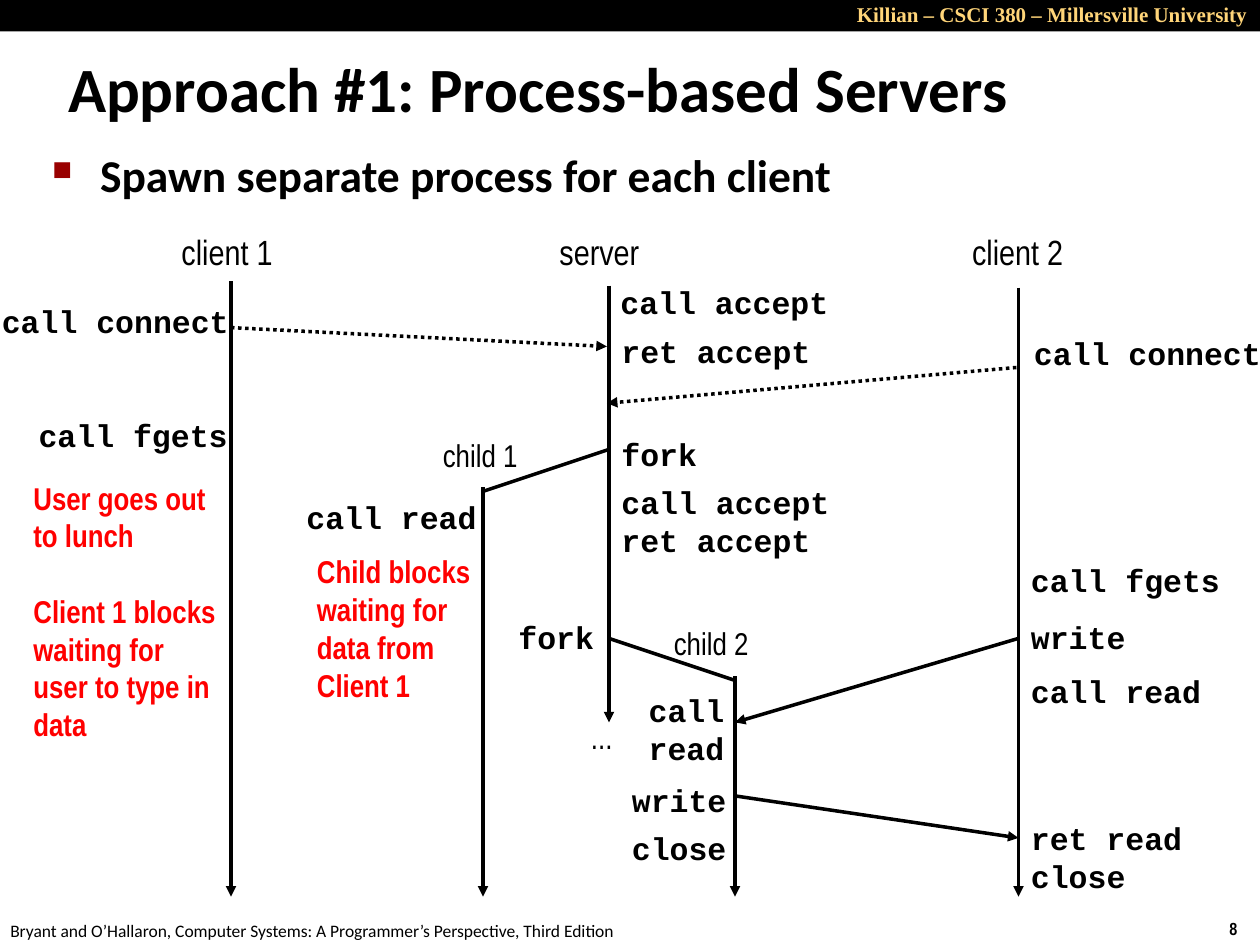
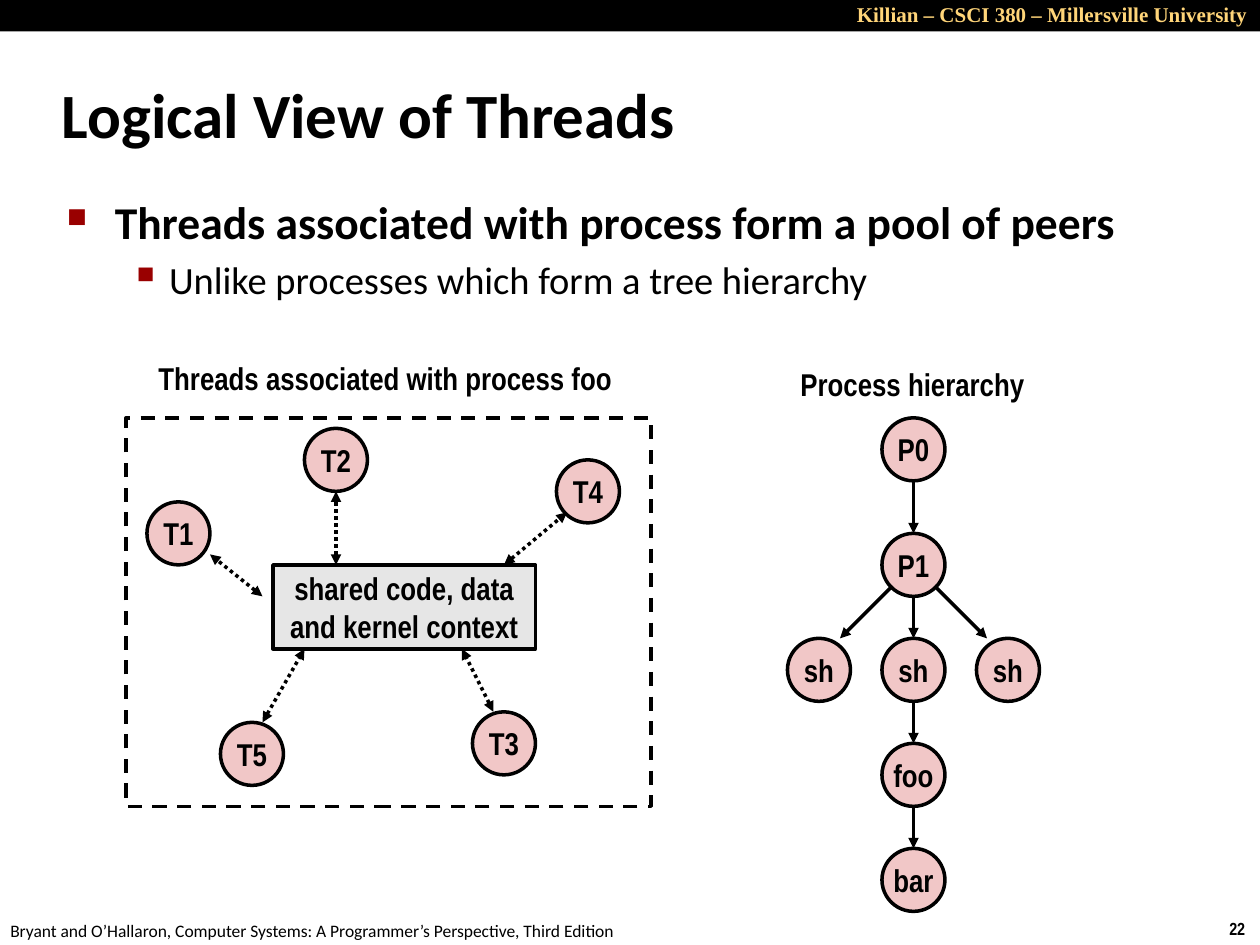
from lxml import etree
from pptx import Presentation
from pptx.dml.color import RGBColor
from pptx.enum.dml import MSO_LINE
from pptx.enum.shapes import MSO_CONNECTOR, MSO_SHAPE
from pptx.enum.text import MSO_ANCHOR, PP_ALIGN
from pptx.oxml.ns import qn
from pptx.util import Inches, Pt

# Grid: 120 columns by 90 rows over the slide
WIDTH, HEIGHT = Inches(10), Inches(7.5)
COLUMNS, ROWS = 120, 90
CELL = WIDTH // COLUMNS

BLACK = RGBColor(0x00, 0x00, 0x00)
GOLD = RGBColor(0xFF, 0xD5, 0x79)
RED = RGBColor(0xFF, 0x00, 0x00)
PINK = RGBColor(0xF1, 0xC7, 0xC7)
GREY = RGBColor(0xE6, 0xE6, 0xE6)
BULLET_RED = "990000"

HEADING, NARROW, CODE, SERIF = "Calibri", "Arial Narrow", "Courier New", "Times New Roman"
LEFT, CENTER, RIGHT = PP_ALIGN.LEFT, PP_ALIGN.CENTER, PP_ALIGN.RIGHT
TOP, MIDDLE = MSO_ANCHOR.TOP, MSO_ANCHOR.MIDDLE
DOTTED, DASHED = MSO_LINE.ROUND_DOT, MSO_LINE.DASH
RECTANGLE, ELLIPSE = MSO_SHAPE.RECTANGLE, MSO_SHAPE.OVAL
STRAIGHT = MSO_CONNECTOR.STRAIGHT

LINE_WIDTH = Pt(2)
TEXT_ROWS = 4.8      # height of one 18 pt line with its margins
NODE = 6             # diameter of a circle

# Bullet levels: left margin, hanging indent, symbol, symbol size %, text size, bold
LEVELS = [(0.38, 0.38, "■", 60, 26, True), (0.81, 0.31, "▪", 110, 22, False)]


def grid(*lengths):
    return [round(length * CELL) for length in lengths]


def style(paragraph, font, size, color=BLACK, bold=False, align=LEFT):
    paragraph.alignment = align
    for run in paragraph.runs:
        run.font.name, run.font.size = font, Pt(size)
        run.font.bold, run.font.color.rgb = bold, color


def fill_text(frame, text, font, size, color=BLACK, bold=False, align=LEFT,
              anchor=TOP, wrap=False):
    frame.word_wrap = wrap
    frame.vertical_anchor = anchor
    frame.text = text
    for paragraph in frame.paragraphs:
        style(paragraph, font, size, color, bold, align)


def text(slide, box, words, font, size, **options):
    frame = slide.shapes.add_textbox(*grid(*box)).text_frame
    fill_text(frame, words, font, size, **options)
    return frame


def shape(slide, kind, box, fill=None, outlined=True, words="", dash=None):
    item = slide.shapes.add_shape(kind, *grid(*box))
    item.shadow.inherit = False
    if fill is None:
        item.fill.background()
    else:
        item.fill.solid()
        item.fill.fore_color.rgb = fill
    if outlined:
        item.line.color.rgb, item.line.width = BLACK, LINE_WIDTH
        if dash:
            item.line.dash_style = dash
    else:
        item.line.fill.background()
    if words:
        fill_text(item.text_frame, words, NARROW, 18, bold=True,
                  align=CENTER, anchor=MIDDLE)


def line(slide, start, end, dash=None, ends=("tailEnd",)):
    connector = slide.shapes.add_connector(STRAIGHT, *grid(*start, *end))
    connector.line.color.rgb, connector.line.width = BLACK, LINE_WIDTH
    if dash:
        connector.line.dash_style = dash
    properties = connector._element.spPr
    for end_name in ends:
        etree.SubElement(properties.find(qn("a:ln")), qn("a:" + end_name), type="triangle")
    etree.SubElement(properties, qn("a:effectLst"))


def code(slide, col, row, words):
    lines = words.split("\n")
    columns = 1.8 * max(map(len, lines)) + 2.4
    rows = TEXT_ROWS + 3.6 * (len(lines) - 1)
    text(slide, (col, row, columns, rows), words, CODE, 18, bold=True)


def node(slide, col, row, name):
    shape(slide, ELLIPSE, (col, row, NODE, NODE), PINK, words=name)


def bullets(slide, box, items):
    frame = text(slide, box, "\n".join(words for _, words in items), HEADING, 26, wrap=True)
    for paragraph, (level, _) in zip(frame.paragraphs, items):
        margin, hanging, symbol, percent, size, bold = LEVELS[level]
        style(paragraph, HEADING, size, bold=bold)
        paragraph.level = level
        paragraph.space_before = Pt(0.2 * size)
        properties = paragraph._p.get_or_add_pPr()
        properties.set("marL", str(Inches(margin)))
        properties.set("indent", str(-Inches(hanging)))
        color = etree.SubElement(properties, qn("a:buClr"))
        etree.SubElement(color, qn("a:srgbClr"), val=BULLET_RED)
        etree.SubElement(properties, qn("a:buSzPct"), val=str(percent * 1000))
        etree.SubElement(properties, qn("a:buChar"), char=symbol)


def new_slide(deck, number, title, title_box):
    """Add a slide with the band, footer, page number and title."""
    slide = deck.slides.add_slide(deck.slide_layouts[6])
    text(slide, (115.9, 86.8, 4.1, 3.2), number, NARROW, 10, bold=True)
    text(slide, (-0.2, 87, 61, 3.2),
         "Bryant and O’Hallaron, Computer Systems: A Programmer’s Perspective, Third Edition",
         HEADING, 10)
    shape(slide, RECTANGLE, (0, 0, COLUMNS, ROWS / 30), BLACK, outlined=False)
    text(slide, (54, -0.4, 66, 3.6), "Killian – CSCI 380 – Millersville University",
         SERIF, 12, color=GOLD, bold=True, align=RIGHT, wrap=True)
    text(slide, title_box, title, HEADING, 36, bold=True, anchor=MIDDLE, wrap=True)
    return slide


def process_slide(deck):
    slide = new_slide(deck, "8", "Approach #1: Process-based Servers", (5.3, 3.2, 114.5, 10.2))
    bullets(slide, (3.8, 13.4, 116.2, 71), [(0, "Spawn separate process for each client")])

    # Timelines, one for each process
    client1, child1, server, child2, client2 = 22, 46, 58, 70, 97
    bottom = 85.4
    for col, start, end in [(client1, 26.8, bottom), (server, 27.2, 68.8),
                            (client2, 27.4, bottom), (child1, 46.4, bottom),
                            (child2, 64.4, bottom)]:
        line(slide, (col, start), (col, end))

    # Process names
    for col, row, columns, name, size in [
            (16.1, 21.4, 11.2, "client 1", 20), (52.1, 21.4, 10.1, "server", 20),
            (91.4, 21.4, 11.2, "client 2", 20), (41, 40.9, 11, "child 1", 18),
            (63, 58.8, 11, "child 2", 18), (55.1, 67.8, 4.9, "...", 18)]:
        text(slide, (col, row, columns, TEXT_ROWS), name, NARROW, size)

    # Connection requests, forks and data
    line(slide, (client1, 31.2), (server - 0.2, 33), DOTTED)
    line(slide, (client2 - 0.2, 35), (server - 0.2, 38.4), DOTTED)
    line(slide, (server, 42.8), (child1, 46.8), ends=())
    line(slide, (server, 60.8), (child2, 64.8), ends=())
    line(slide, (client2, 60.8), (child2, 68.8))
    line(slide, (child2, 75.8), (client2, 79.8))

    # Calls beside each timeline
    for col, row, call in [
            (-1, 28.2, "call connect"), (2.5, 39, "call fgets"),
            (28, 46.8, "call read"),
            (server - 0.1, 26.4, "call accept"), (server, 31, "ret accept"),
            (server, 40.8, "fork"), (server, 45.4, "call accept"),
            (server, 49, "ret accept"), (48.2, 58.3, "fork"),
            (60.6, 65.2, "call\nread"), (59, 73.8, "write"), (59, 78.4, "close"),
            (client2 + 0.3, 31.2, "call connect"), (client2, 52.8, "call fgets"),
            (client2, 58.3, "write"), (client2, 63.4, "call read"),
            (client2, 77.4, "ret read"), (client2, 81, "close")]:
        code(slide, col, row, call)

    # Red remarks about blocking
    red_note = dict(color=RED, bold=True, wrap=True)
    lunch = text(slide, (2, 45, 20, 26.6),
                 "User goes out to lunch\nClient 1 blocks\nwaiting for user to type in data",
                 NARROW, 18, **red_note)
    lunch.paragraphs[1].space_before = Pt(21.5)
    text(slide, (29, 52, 20, 15.7), "Child blocks waiting for data from Client 1",
         NARROW, 18, **red_note)


def thread_slide(deck):
    slide = new_slide(deck, "22", "Logical View of Threads", (4.7, 5.8, 99.6, 10))
    bullets(slide, (5.2, 17.9, 103.7, 65.3),
            [(0, "Threads associated with process form a pool of peers"),
             (1, "Unlike processes which form a tree hierarchy")])
    for box, heading in [((9.1, 33.6, 55.2, TEXT_ROWS), "Threads associated with process foo"),
                         ((72.7, 34.2, 28.4, TEXT_ROWS), "Process hierarchy")]:
        text(slide, box, heading, NARROW, 18, bold=True, align=CENTER, anchor=MIDDLE)

    # Process tree: a trunk with two side branches
    trunk, branch = 84, 9
    middle = trunk + NODE / 2
    trunk_rows = [39.8, 50.8, 60.8, 70.8, 80.8]
    for row, name in zip(trunk_rows, ["P0", "P1", "sh", "foo", "bar"]):
        node(slide, trunk, row, name)
    for parent, child in zip(trunk_rows, trunk_rows[1:]):
        line(slide, (middle, parent + NODE), (middle, child))
    shell_row = trunk_rows[2]
    for side in (-1, 1):
        node(slide, trunk + side * branch, shell_row, "sh")
        line(slide, (middle + side * 2, shell_row - 5), (middle + side * 7, shell_row))

    # Pool of threads around the shared context
    shape(slide, RECTANGLE, (12, 39.8, 50, 37), dash=DASHED)
    top, bottom = 53.8, 61.8
    shape(slide, RECTANGLE, (26, top, 25, bottom - top), GREY,
          words="shared code, data\nand kernel context")
    for name, col, row, start, end in [
            ("T1", 14, 47.8, (25, 56.8), (20, 52.8)),
            ("T2", 29, 40.8, (32, top), (32, 46.8)),
            ("T4", 53, 43.8, (48, top), (54, 48.8)),
            ("T5", 21, 68.8, (25, 68.8), (29, bottom)),
            ("T3", 45, 67.8, (47, 67.8), (44, bottom))]:
        node(slide, col, row, name)
        line(slide, start, end, DOTTED, ends=("headEnd", "tailEnd"))


def main():
    deck = Presentation()
    deck.slide_width, deck.slide_height = WIDTH, HEIGHT
    process_slide(deck)
    thread_slide(deck)
    deck.save("out.pptx")


if __name__ == "__main__":
    main()
